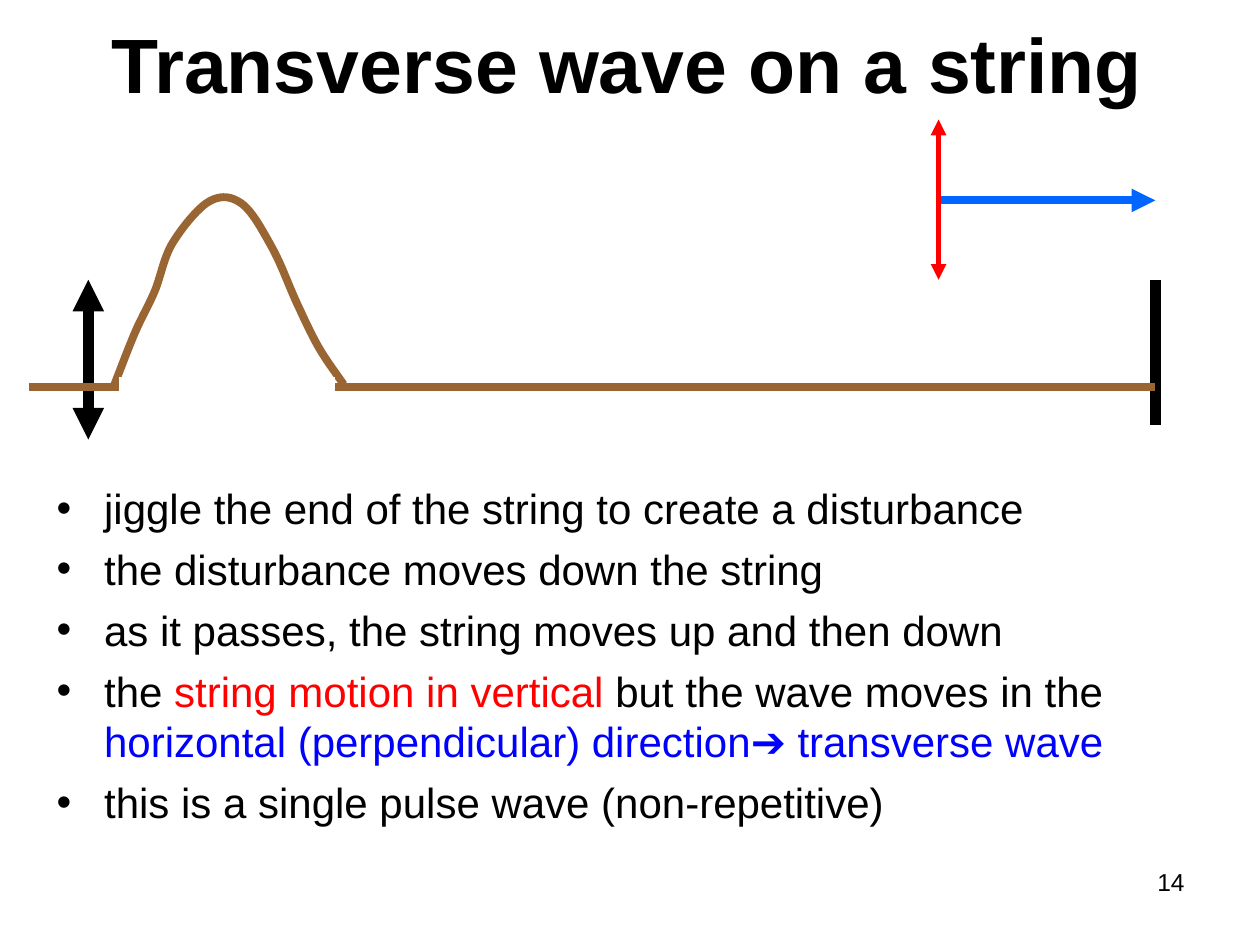
"""Build a slide that explains a transverse wave on a string."""
from pptx import Presentation
from pptx.dml.color import RGBColor
from pptx.enum.shapes import MSO_CONNECTOR as LINK
from pptx.enum.text import MSO_ANCHOR as ANCHOR, PP_ALIGN as ALIGN
from pptx.oxml.ns import qn
from pptx.util import Cm, Pt
from lxml.etree import SubElement

BLACK, RED, BLUE, BROWN, WHITE = "000000", "FF0000", "0000FF", "996633", "FFFFFF"

deck = Presentation()
deck.slide_width, deck.slide_height = Cm(25.4), Cm(19.05)
page = deck.slides.add_slide(deck.slide_layouts[6])


def hex_color(value):
    return RGBColor.from_string(value)


def write(para, text, size=24, color=BLACK, bold=False, align=ALIGN.LEFT):
    para.alignment = align
    span = para.add_run()
    span.text = text
    span.font.name = "Arial"
    span.font.size = Pt(size)
    span.font.bold = bold
    span.font.color.rgb = hex_color(color)


title_box = page.shapes.add_textbox(Cm(1.22), Cm(0.1), Cm(22.86), Cm(2.31))
title_box.text_frame.word_wrap = True
title_box.text_frame.vertical_anchor = ANCHOR.MIDDLE
write(title_box.text_frame.paragraphs[0], "Transverse wave on a string",
      size=44, bold=True, align=ALIGN.CENTER)

bullets = [
    [("jiggle the end of the string to create a disturbance", BLACK)],
    [("the disturbance moves down the string", BLACK)],
    [("as it passes, the string moves up and then down", BLACK)],
    [("the ", BLACK), ("string motion in vertical", RED),
     (" but the wave moves in the ", BLACK),
     ("horizontal (perpendicular) direction➔ transverse wave", BLUE)],
    [("this is a single pulse wave (non-repetitive)", BLACK)],
]
body_box = page.shapes.add_textbox(Cm(0.89), Cm(9.6), Cm(23.52), Cm(7.7))
body = body_box.text_frame
body.word_wrap = True
for index, parts in enumerate(bullets):
    para = body.add_paragraph() if index else body.paragraphs[0]
    para.space_before = Pt(6)
    for text, color in parts:
        write(para, text, color=color)
    props = para._p.get_or_add_pPr()
    props.set("marL", str(Cm(0.96)))
    props.set("indent", str(-Cm(0.96)))
    SubElement(props, qn("a:buFont"), typeface="Arial")
    SubElement(props, qn("a:buChar"), char="•")

number_box = page.shapes.add_textbox(Cm(18.21), Cm(17.35), Cm(5.92), Cm(1.32))
number_box.text_frame.word_wrap = True
write(number_box.text_frame.paragraphs[0], "14", size=14, align=ALIGN.RIGHT)

wall_x, string_y = 23.29, 7.8
knots = [(2.29, string_y), (2.72, 6.71), (3.12, 5.87), (3.48, 4.9), (4.22, 4.06),
         (4.88, 4.11), (5.49, 5), (5.99, 6.12), (6.43, 7.01), (6.93, 7.75)]
lines = [
    ((wall_x, 5.64), (wall_x, 8.56), BLACK, 6, []),
    ((18.92, 5.64), (18.92, 2.41), RED, 3, ["headEnd", "tailEnd"]),
    ((18.97, 4.04), (wall_x, 4.04), "0066FF", 4.5, ["tailEnd"]),
    ((1.78, 5.64), (1.78, 8.86), BLACK, 6, ["headEnd", "tailEnd"]),
    ((0.58, string_y), (wall_x, string_y), BROWN, 4.5, []),
    ("pulse", None, BROWN, 4.5, []),
    ((2.39, 7.75), (6.76, 7.75), WHITE, 9, []),
]
for start, end, color, width, arrowheads in lines:
    if start == "pulse":
        padded = [knots[0], *knots, knots[-1]]
        curve = []
        for before, a, b, after in zip(padded, padded[1:], padded[2:], padded[3:]):
            for step in range(1, 13):
                t = step / 12
                curve.append(tuple(
                    Cm(q + ((r - p) * t + (2 * p - 5 * q + 4 * r - s) * t ** 2
                            + (3 * q - p - 3 * r + s) * t ** 3) / 2)
                    for p, q, r, s in zip(before, a, b, after)))
        builder = page.shapes.build_freeform(*(Cm(value) for value in knots[0]))
        builder.add_line_segments(curve, close=False)
        shape = builder.convert_to_shape()
        shape.fill.background()
        shape.shadow.inherit = False
    else:
        shape = page.shapes.add_connector(
            LINK.STRAIGHT, *(Cm(value) for value in (*start, *end)))
        SubElement(shape._element.spPr, qn("a:effectLst"))
    shape.line.color.rgb = hex_color(color)
    shape.line.width = Pt(width)
    for arrowhead in arrowheads:
        SubElement(shape.line._get_or_add_ln(), qn(f"a:{arrowhead}"), type="triangle")

deck.save("out.pptx")
